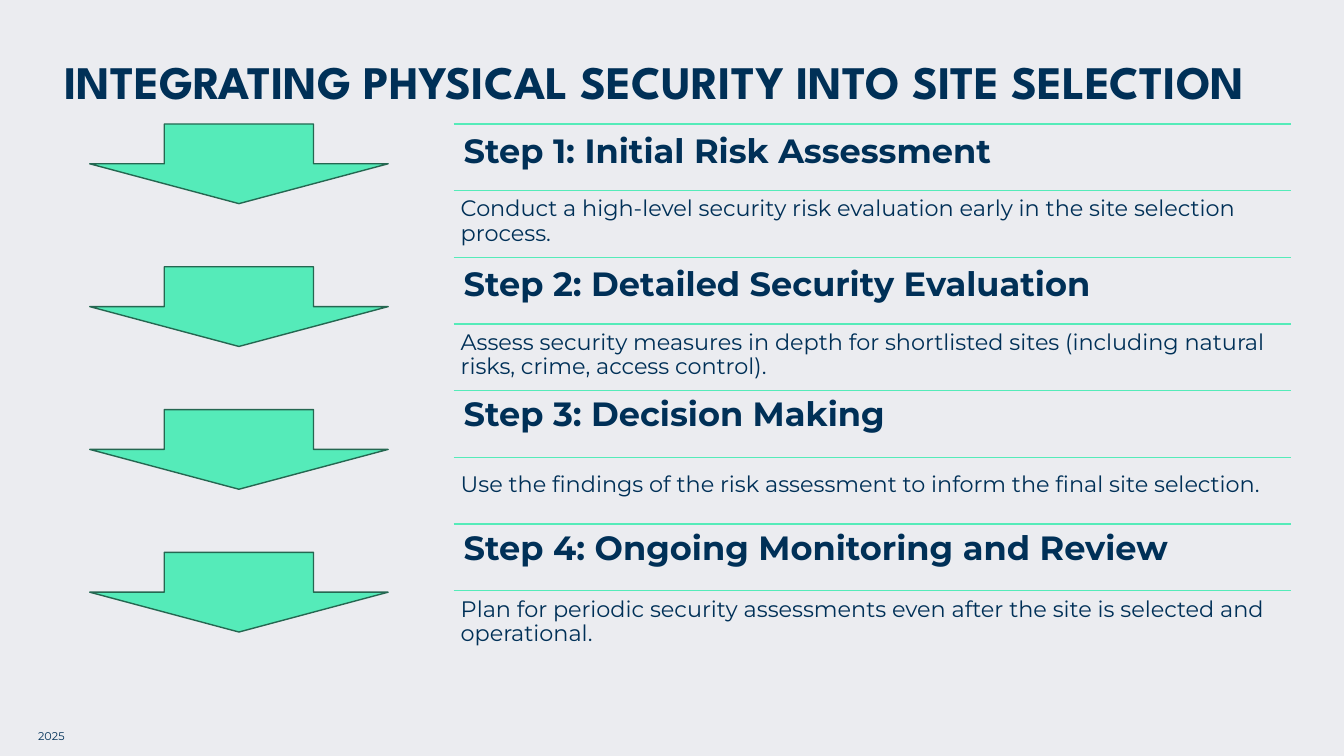
from lxml import etree
from pptx import Presentation
from pptx.dml.color import RGBColor
from pptx.enum.shapes import MSO_CONNECTOR, MSO_SHAPE
from pptx.enum.text import MSO_ANCHOR
from pptx.oxml.ns import qn
from pptx.util import Inches, Pt

STRAIGHT = MSO_CONNECTOR.STRAIGHT
DOWN_ARROW = MSO_SHAPE.DOWN_ARROW
TOP, MIDDLE = MSO_ANCHOR.TOP, MSO_ANCHOR.MIDDLE

TITLE = "INTEGRATING PHYSICAL SECURITY INTO SITE SELECTION"
FOOTER = "2025"
# heading, heading shift, description, description shift
STEPS = [
    ("Step 1: Initial Risk Assessment", 0,
     "Conduct a high-level security risk evaluation early in the site selection process.", 0),
    ("Step 2: Detailed Security Evaluation", 0,
     "Assess security measures in depth for shortlisted sites "
     "(including natural risks, crime, access control).", 0),
    ("Step 3: Decision Making", -0.03,
     "Use the findings of the risk assessment to inform the final site selection.", 0.09),
    ("Step 4: Ongoing Monitoring and Review", -0.03,
     "Plan for periodic security assessments even after the site is selected and operational.", 0),
]
COLORS = {"background": "EBECF0", "text": "003057", "accent": "55EBB9", "outline": "256751"}
HEADING_FONT, BODY_FONT = "League Spartan", "Montserrat"

LIST_LEFT, LIST_TOP, LIST_WIDTH = 4.5, 1.23, 8.3
ROW_PITCH = 4.63 / 7
ARROW_LEFT, ARROW_WIDTH, ARROW_HEIGHT = 0.89, 2.96, 0.79
ARROW_PITCH = 4.25 / 3


def rgb(name):
    """Return a palette colour."""
    return RGBColor.from_string(COLORS[name])


def add_text(slide, text, box, size, font=BODY_FONT, bold=False,
             insets=(0.1, 0.05), spacing=0.9, anchor=TOP):
    """Add one wrapped paragraph in a text box."""
    tf = slide.shapes.add_textbox(*map(Inches, box)).text_frame
    tf.word_wrap = True
    tf.vertical_anchor = anchor
    tf.margin_left = tf.margin_right = Inches(insets[0])
    tf.margin_top = tf.margin_bottom = Inches(insets[1])
    p = tf.paragraphs[0]
    p.text = text
    p.line_spacing = spacing
    r = p.runs[0]
    r.font.name, r.font.size, r.font.bold = font, Pt(size), bold
    r.font.color.rgb = rgb("text")


def add_rule(slide, y):
    """Add a horizontal rule above a row."""
    line = slide.shapes.add_connector(
        STRAIGHT, Inches(LIST_LEFT), Inches(y), Inches(LIST_LEFT + LIST_WIDTH), Inches(y))
    line.line.color.rgb = rgb("accent")
    line.line.width = Pt(1)
    etree.SubElement(line._element.spPr, qn("a:effectLst"))


def add_arrow(slide, y):
    """Add a step arrow."""
    sp = slide.shapes.add_shape(
        DOWN_ARROW, Inches(ARROW_LEFT), Inches(y), Inches(ARROW_WIDTH), Inches(ARROW_HEIGHT))
    sp.shadow.inherit = False
    sp.fill.solid()
    sp.fill.fore_color.rgb = rgb("accent")
    sp.line.color.rgb = rgb("outline")
    sp.line.width = Pt(1)


def main():
    """Build the site selection slide."""
    prs = Presentation()
    prs.slide_width, prs.slide_height = Inches(13.33), Inches(7.5)
    slide = prs.slides.add_slide(prs.slide_layouts[6])
    slide.background.fill.solid()
    slide.background.fill.fore_color.rgb = rgb("background")

    add_text(slide, FOOTER, (0.28, 7.19, 2.62, 0.24), 8, spacing=1)
    add_text(slide, TITLE, (0.54, 0.51, 12.26, 0.66), 33.3, HEADING_FONT, True, anchor=MIDDLE)
    for i, (heading, heading_shift, description, description_shift) in enumerate(STEPS):
        rows = [(heading, heading_shift, 24, True, 0.1),
                (description, description_shift, 16, False, 0.07)]
        for j, (text, shift, size, bold, inset) in enumerate(rows):
            y = LIST_TOP + (2 * i + j) * ROW_PITCH
            add_rule(slide, y)
            add_text(slide, text, (LIST_LEFT, y + shift, LIST_WIDTH, 0.66), size,
                     bold=bold, insets=(inset, inset))
        add_arrow(slide, LIST_TOP + i * ARROW_PITCH)
    prs.save("out.pptx")


if __name__ == "__main__":
    main()
